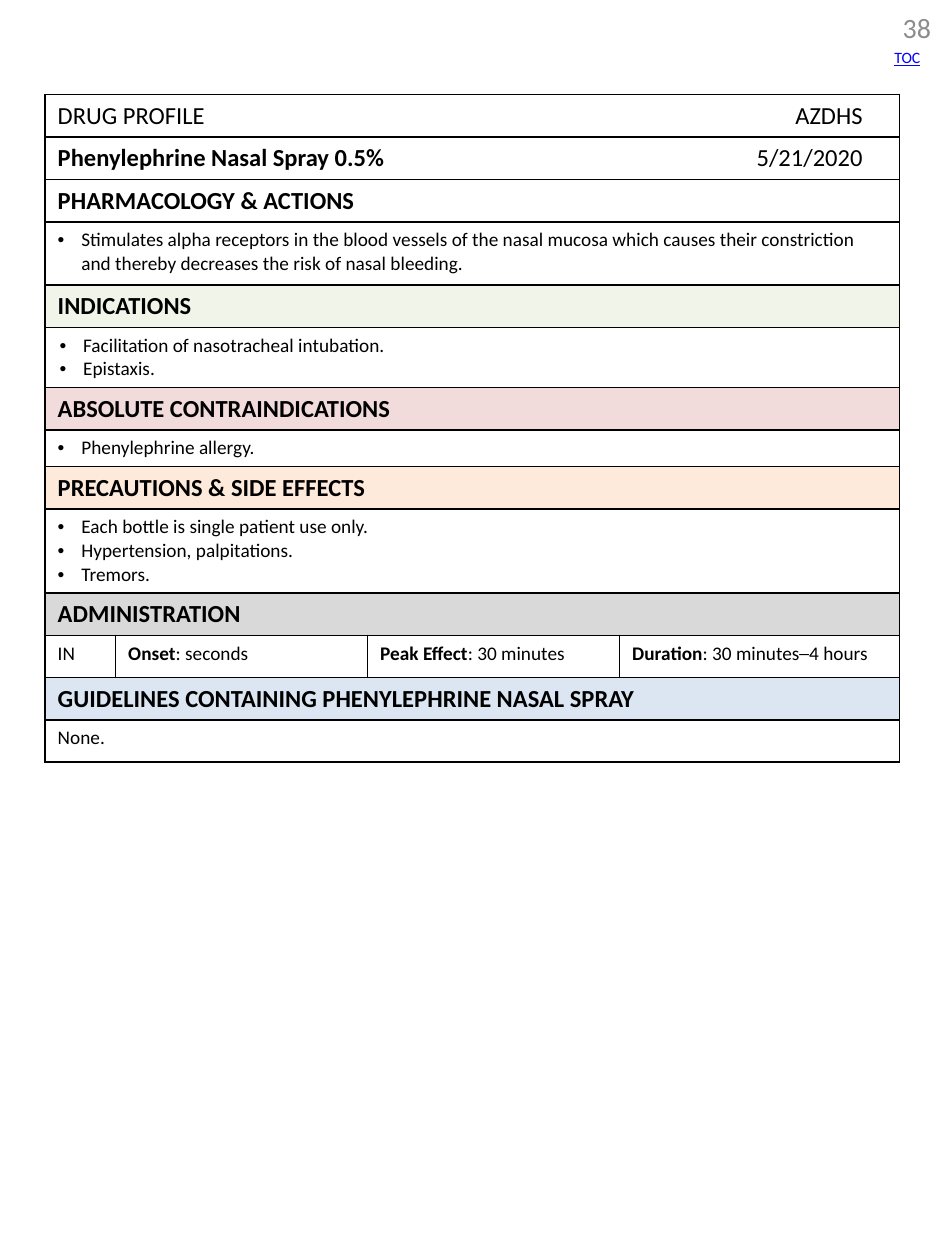
from dataclasses import dataclass

from lxml import etree
from pptx import Presentation
from pptx.dml.color import RGBColor
from pptx.enum.text import MSO_ANCHOR, PP_ALIGN
from pptx.oxml.ns import qn
from pptx.util import Pt

MIDDLE, TOP = MSO_ANCHOR.MIDDLE, MSO_ANCHOR.TOP
LEFT, RIGHT = PP_ALIGN.LEFT, PP_ALIGN.RIGHT


@dataclass(frozen=True)
class Theme:
    font: str = "Calibri"
    ink: str = "000000"
    page_gray: str = "8C8C8C"
    link_blue: str = "0000FF"
    green: str = "EBF1DE"
    red: str = "F2DCDB"
    orange: str = "FDEADA"
    gray: str = "D9D9D9"
    blue: str = "DCE6F2"
    page_size: float = 16
    heading_size: float = 14
    body_size: float = 11
    link_size: float = 9
    border: float = 1
    hanging: float = 13.5
    right_tab: float = 460


class ProfilePage:
    def __init__(self, slide, theme):
        self.slide = slide
        self.theme = theme

    def run(self, paragraph, text, size, color=None, bold=False, underline=False):
        run = paragraph.add_run()
        run.text = text
        font = run.font
        font.name, font.size = self.theme.font, Pt(size)
        font.bold, font.underline = bold, underline
        font.color.rgb = RGBColor.from_string(color or self.theme.ink)

    def label(self, box, text, size, color, align=LEFT, margins=None, underline=False):
        shape = self.slide.shapes.add_textbox(*(Pt(value) for value in box))
        frame = shape.text_frame
        frame.word_wrap = True
        if margins is not None:
            frame.margin_left = frame.margin_right = Pt(margins)
            frame.margin_top = frame.margin_bottom = Pt(margins)
        paragraph = frame.paragraphs[0]
        paragraph.alignment = align
        self.run(paragraph, text, size, color, underline=underline)

    def table(self, left, top, widths, heights):
        table = self.slide.shapes.add_table(
            len(heights), len(widths), Pt(left), Pt(top),
            Pt(sum(widths)), Pt(sum(heights))).table
        table.first_row = table.horz_banding = False
        for column, width in zip(table.columns, widths):
            column.width = Pt(width)
        for row, height in zip(table.rows, heights):
            row.height = Pt(height)
        return table

    def cell_style(self, cell, fill=None, opacity=100):
        if fill:
            cell.fill.solid()
            cell.fill.fore_color.rgb = RGBColor.from_string(fill)
        else:
            cell.fill.background()
        properties = cell._tc.get_or_add_tcPr()
        if opacity < 100:
            color = properties.find(".//" + qn("a:srgbClr"))
            etree.SubElement(color, qn("a:alpha"), val=str(opacity * 1000))
        # Border lines come before the fill in the cell properties
        for position, side in enumerate("LRTB"):
            line = etree.Element(qn(f"a:ln{side}"), w=str(Pt(self.theme.border)))
            solid = etree.SubElement(line, qn("a:solidFill"))
            etree.SubElement(solid, qn("a:srgbClr"), val=self.theme.ink)
            properties.insert(position, line)

    def full_row(self, table, row, fill=None, opacity=100):
        cells = list(table.rows[row].cells)
        cells[0].merge(cells[-1])
        for cell in cells:
            self.cell_style(cell, fill, opacity)
        return cells[0]

    def heading(self, table, row, text, fill=None, opacity=100, bold=True, end=None):
        cell = self.full_row(table, row, fill, opacity)
        cell.vertical_anchor = MIDDLE
        paragraph = cell.text_frame.paragraphs[0]
        self.run(paragraph, text, self.theme.heading_size, bold=bold)
        if end:
            stops = etree.SubElement(paragraph._p.get_or_add_pPr(), qn("a:tabLst"))
            etree.SubElement(stops, qn("a:tab"), pos=str(Pt(self.theme.right_tab)),
                             algn="r")
            self.run(paragraph, "\t" + end, self.theme.heading_size)

    def body(self, table, row, lines, indent=13.5, bullets=True):
        frame = self.full_row(table, row).text_frame
        for number, line in enumerate(lines):
            paragraph = frame.add_paragraph() if number else frame.paragraphs[0]
            if bullets:
                properties = paragraph._p.get_or_add_pPr()
                properties.set("marL", str(Pt(indent)))
                properties.set("indent", str(-Pt(self.theme.hanging)))
                etree.SubElement(properties, qn("a:buFont"), typeface="Arial")
                etree.SubElement(properties, qn("a:buChar"), char="•")
            self.run(paragraph, line, self.theme.body_size)

    def facts(self, table, row, facts):
        for cell, (name, value) in zip(table.rows[row].cells, facts):
            self.cell_style(cell)
            cell.vertical_anchor = TOP
            paragraph = cell.text_frame.paragraphs[0]
            if name:
                self.run(paragraph, name, self.theme.body_size, bold=True)
            self.run(paragraph, value, self.theme.body_size)


def main():
    theme = Theme()
    presentation = Presentation()
    presentation.slide_width, presentation.slide_height = Pt(540), Pt(720)
    slide = presentation.slides.add_slide(presentation.slide_layouts[6])
    page = ProfilePage(slide, theme)

    # Drug profile table
    head = 24.2
    heights = [head, head, head, 36, head, 34.3, head, 20.9, head, 48,
               head, 24, head, 24]
    table = page.table(25.8, 54, [40.3, 144, 144, 160], heights)
    page.heading(table, 0, "DRUG PROFILE", bold=False, end="AZDHS")
    page.heading(table, 1, "Phenylephrine Nasal Spray 0.5%", end="5/21/2020")

    # Section headings
    page.heading(table, 2, "PHARMACOLOGY & ACTIONS")
    page.heading(table, 4, "INDICATIONS", theme.green, opacity=65)
    page.heading(table, 6, "ABSOLUTE CONTRAINDICATIONS", theme.red)
    page.heading(table, 8, "PRECAUTIONS & SIDE EFFECTS", theme.orange)
    page.heading(table, 10, "ADMINISTRATION", theme.gray)
    page.heading(table, 12, "GUIDELINES CONTAINING PHENYLEPHRINE NASAL SPRAY",
                 theme.blue)

    # Section contents
    page.body(table, 3, [
        "Stimulates alpha receptors in the blood vessels of the nasal mucosa which "
        "causes their constriction and thereby decreases the risk of nasal bleeding."])
    page.body(table, 5, ["Facilitation of nasotracheal intubation.", "Epistaxis."],
              indent=14.5)
    page.body(table, 7, ["Phenylephrine allergy."])
    page.body(table, 9, ["Each bottle is single patient use only.",
                         "Hypertension, palpitations.", "Tremors."])
    page.facts(table, 11, [("", "IN"), ("Onset", ": seconds"),
                           ("Peak Effect", ": 30 minutes"),
                           ("Duration", ": 30 minutes─4 hours")])
    page.body(table, 13, ["None."], bullets=False)

    # Page number and contents mark
    page.label((498, 6, 34, 19.5), "38", theme.page_size, theme.page_gray,
               align=RIGHT, margins=0)
    page.label((504, 24, 30, 18), "TOC", theme.link_size, theme.link_blue,
               underline=True)

    presentation.save("out.pptx")


if __name__ == "__main__":
    main()
